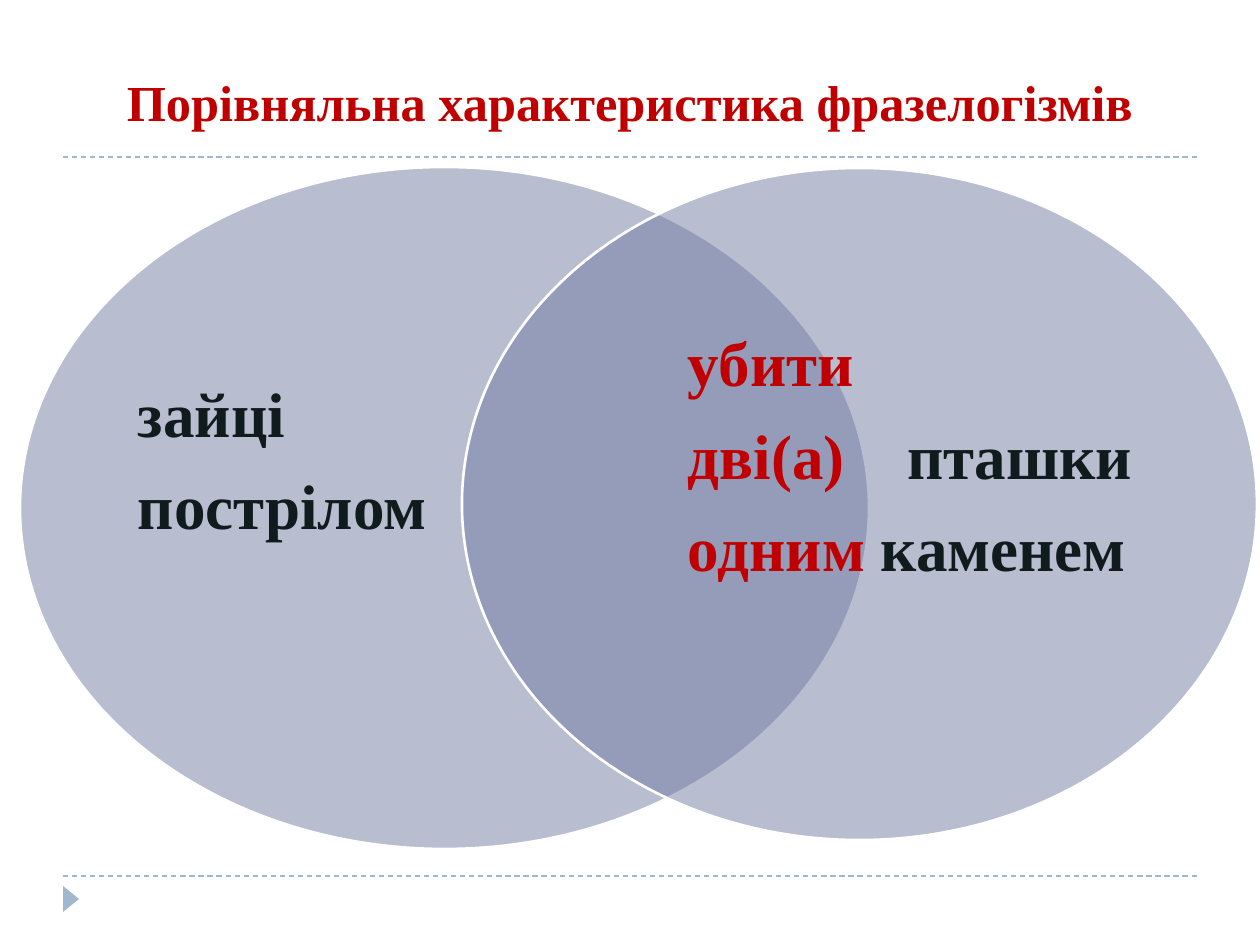
from lxml import etree
from pptx import Presentation
from pptx.dml.color import RGBColor
from pptx.enum.dml import MSO_LINE
from pptx.enum.shapes import MSO_CONNECTOR, MSO_SHAPE
from pptx.enum.text import MSO_ANCHOR, PP_ALIGN
from pptx.oxml.ns import qn
from pptx.util import Emu, Pt

EMU_PER_PX = 914400 / 126
SLIDE_SIZE = (1260, 945)
FONT = "Times New Roman"

RED = RGBColor(0xC0, 0x00, 0x00)
DARK = RGBColor(0x10, 0x1B, 0x1D)
PALE_BLUE = RGBColor(0x9F, 0xB8, 0xCD)
VIOLET = RGBColor(0x72, 0x7C, 0xA3)
WHITE = RGBColor(0xFF, 0xFF, 0xFF)

STRAIGHT = MSO_CONNECTOR.STRAIGHT
OVAL = MSO_SHAPE.OVAL
TRIANGLE = MSO_SHAPE.ISOSCELES_TRIANGLE
DASH = MSO_LINE.DASH
BOTTOM, MIDDLE = MSO_ANCHOR.BOTTOM, MSO_ANCHOR.MIDDLE
LEFT, CENTER, JUSTIFY = PP_ALIGN.LEFT, PP_ALIGN.CENTER, PP_ALIGN.JUSTIFY


def px(length):
    return Emu(round(length * EMU_PER_PX))


def add_rule(slide, y):
    """Dashed line across the slide between its side margins."""
    rule = slide.shapes.add_connector(STRAIGHT, px(63), px(y), px(1197), px(y))
    rule.line.color.rgb = PALE_BLUE
    rule.line.width = Pt(0.75)
    rule.line.dash_style = DASH
    etree.SubElement(rule._element.spPr, qn("a:effectLst"))


def add_filled(slide, kind, box, color):
    shape = slide.shapes.add_shape(kind, *map(px, box))
    shape.shadow.inherit = False
    shape.fill.solid()
    shape.fill.fore_color.rgb = color
    shape.line.fill.background()
    return shape


def add_venn_circle(slide, box):
    circle = add_filled(slide, OVAL, box, VIOLET)
    color = circle.fill._xPr.find(qn("a:solidFill"))[0]
    etree.SubElement(color, qn("a:alpha"), val="50000")
    circle.line.color.rgb = WHITE
    circle.line.width = Pt(1.5)


def add_tab_stop(paragraph, position):
    tabs = etree.SubElement(paragraph._p.get_or_add_pPr(), qn("a:tabLst"))
    etree.SubElement(tabs, qn("a:tab"), pos=str(px(position)), algn="l")


def add_text(slide, box, lines, *, size=36, align=LEFT, anchor=MIDDLE,
             insets=(0, 0, 0, 90), spacing=0.9, after=14, tab=None):
    """Each line is a list of (text, colour) runs; insets are left, top, right, bottom."""
    frame = slide.shapes.add_textbox(*map(px, box)).text_frame
    frame.word_wrap = True
    frame.vertical_anchor = anchor
    (frame.margin_left, frame.margin_top,
     frame.margin_right, frame.margin_bottom) = map(px, insets)
    for index, line in enumerate(lines):
        paragraph = frame.add_paragraph() if index else frame.paragraphs[0]
        paragraph.alignment = align
        paragraph.line_spacing = spacing
        paragraph.space_after = Pt(after)
        if tab:
            add_tab_stop(paragraph, tab)
        for text, color in line:
            run = paragraph.add_run()
            run.text = text
            run.font.name = FONT
            run.font.size = Pt(size)
            run.font.bold = True
            run.font.color.rgb = color


def main():
    presentation = Presentation()
    presentation.slide_width, presentation.slide_height = map(px, SLIDE_SIZE)
    slide = presentation.slides.add_slide(presentation.slide_layouts[6])

    for y in (876, 157):
        add_rule(slide, y)
    marker = add_filled(slide, TRIANGLE, (58, 891, 26, 16), PALE_BLUE)
    marker.rotation = 90

    add_text(slide, (63, 21, 1134, 117),
             [[("Порівняльна характеристика фразелогізмів", RED)]],
             size=28.8, align=CENTER, anchor=BOTTOM, insets=(12, 6, 12, 6),
             spacing=1.0, after=0)

    add_venn_circle(slide, (20, 167, 849, 682))
    add_text(slide, (138, 247, 490, 522),
             [[("зайці", DARK)], [("пострілом", DARK)]])

    add_venn_circle(slide, (462, 168, 795, 672))
    add_text(slide, (688, 247, 459, 514),
             [[("убити", RED)],
              [("дві(а)\t", RED), ("пташки", DARK)],
              [("одним ", RED), ("каменем", DARK)]],
             align=JUSTIFY, tab=219)

    presentation.save("out.pptx")


if __name__ == "__main__":
    main()
